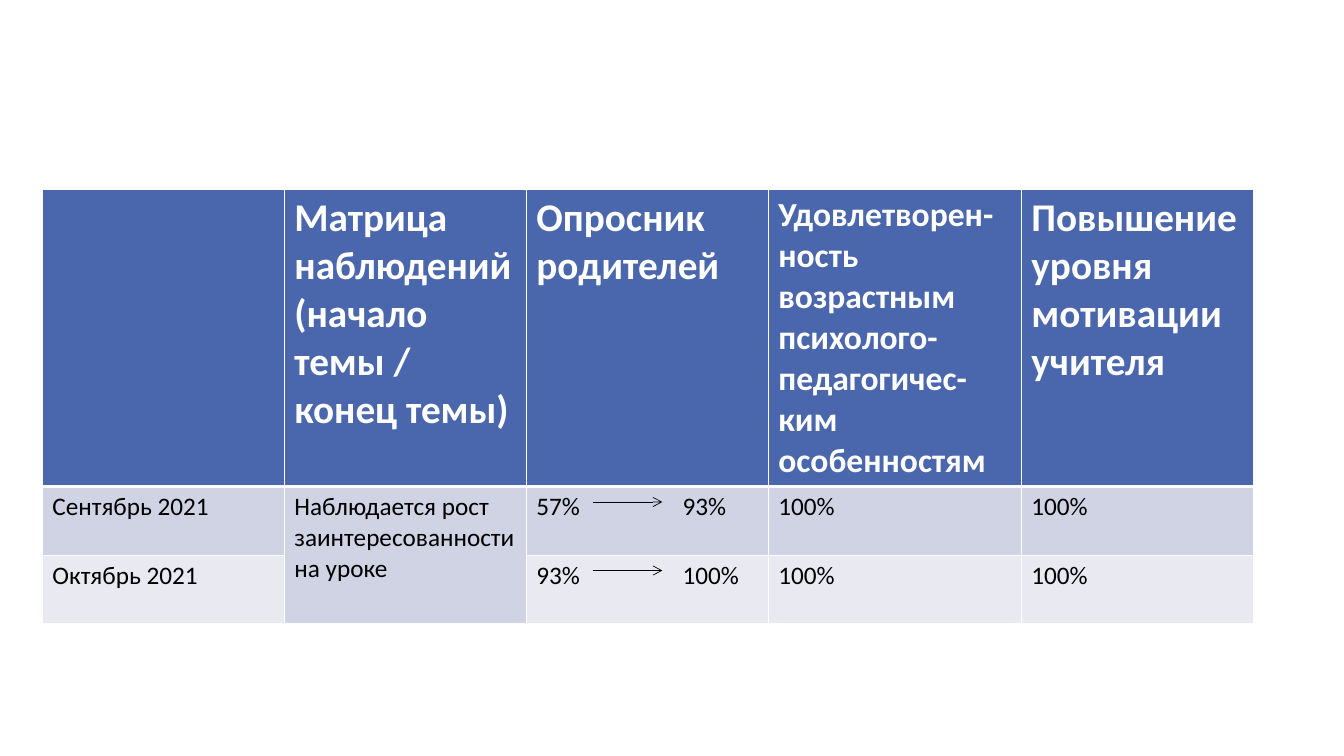
import pptx
import pptx.dml.color
import pptx.enum.shapes
import pptx.oxml
import pptx.oxml.ns
import pptx.util

Inches = pptx.util.Inches
COLUMN_WIDTHS = [2.4, 2.4, 2.4, 2.51, 2.3]
ROW_HEIGHTS = [2.94, 0.68, 0.68]
ROW_FILLS = ["4A66AC", "D0D3E3", "E9EAF1"]
HEADER_SIZES = [28, 28, 28, 24, 28]
SURVEY_COLUMN = 2
SURVEY_TAB = 1.45
ROWS = [
    ["", "Матрица наблюдений\n(начало темы / конец темы)", "Опросник родителей",
     "Удовлетворен-ность возрастным психолого-педагогичес-ким особенностям",
     "Повышение уровня мотивации учителя"],
    ["Сентябрь 2021", "Наблюдается рост заинтересованности на уроке", "57%\t93%", "100%", "100%"],
    ["Октябрь 2021", "", "93%\t100%", "100%", "100%"],
]


def color(value):
    return pptx.dml.color.RGBColor.from_string(value)


def add_element(parent, tag, **attributes):
    element = pptx.oxml.parse_xml(f"<a:{tag} {pptx.oxml.ns.nsdecls('a')}/>")
    for name, value in attributes.items():
        element.set(name, str(value))
    parent.append(element)
    return element


def set_borders(cell, widths):
    """Draw white borders, with widths in points by side."""
    properties = cell._tc.get_or_add_tcPr()
    for side, width in widths.items():
        line = add_element(properties, f"ln{side}", w=pptx.util.Pt(width))
        add_element(add_element(line, "solidFill"), "srgbClr", val="FFFFFF")


def fill_cell(cell, text, fill, font, borders, tab=None):
    set_borders(cell, borders)
    cell.fill.solid()
    cell.fill.fore_color.rgb = color(fill)
    cell.text = text
    for para in cell.text_frame.paragraphs:
        if tab:
            stops = add_element(para._p.get_or_add_pPr(), "tabLst")
            add_element(stops, "tab", pos=Inches(tab), algn="l")
        for target in [para.font] + [span.font for span in para.runs]:
            for name, value in font.items():
                setattr(target, name, value)
            target.color.rgb = color("000000" if "\t" in text or not font["bold"] else "FFFFFF")


def add_results_table(page, left, top):
    frame = page.shapes.add_table(
        len(ROWS), len(COLUMN_WIDTHS), Inches(left), Inches(top),
        Inches(sum(COLUMN_WIDTHS)), Inches(sum(ROW_HEIGHTS)))
    table = frame.table
    for column, width in zip(table.columns, COLUMN_WIDTHS):
        column.width = Inches(width)
    for row, height in zip(table.rows, ROW_HEIGHTS):
        row.height = Inches(height)
    for r, texts in enumerate(ROWS):
        header = r == 0
        for c, text in enumerate(texts):
            font = {"name": "Calibri", "bold": header,
                    "size": pptx.util.Pt(HEADER_SIZES[c] if header else 18)}
            borders = {"L": 1, "R": 1, "T": 3 if r == 1 else 1, "B": 3 if header else 1}
            tab = SURVEY_TAB if c == SURVEY_COLUMN and not header else None
            fill_cell(table.cell(r, c), text, ROW_FILLS[r], font, borders, tab)
    table.cell(1, 1).merge(table.cell(2, 1))


def add_growth_arrow(page, left, top, width):
    arrow = page.shapes.add_connector(
        pptx.enum.shapes.MSO_CONNECTOR.STRAIGHT,
        Inches(left), Inches(top), Inches(left + width), Inches(top))
    arrow.line.color.rgb = color("000000")
    arrow.line.width = pptx.util.Pt(0.5)
    add_element(arrow.line._get_or_add_ln(), "tailEnd", type="arrow")
    add_element(arrow._element.spPr, "effectLst")


def build_results_page(page, left, top):
    add_results_table(page, left, top)
    survey_left = left + sum(COLUMN_WIDTHS[:SURVEY_COLUMN])
    for r in range(1, len(ROWS)):
        row_top = top + sum(ROW_HEIGHTS[:r])
        add_growth_arrow(page, survey_left + 0.66, row_top + 0.16, 0.69)


def main():
    deck = pptx.Presentation()
    deck.slide_width = Inches(13.33)
    deck.slide_height = Inches(7.5)
    page = deck.slides.add_slide(deck.slide_layouts[6])
    build_results_page(page, 0.42, 1.88)
    deck.save("out.pptx")


if __name__ == "__main__":
    main()
